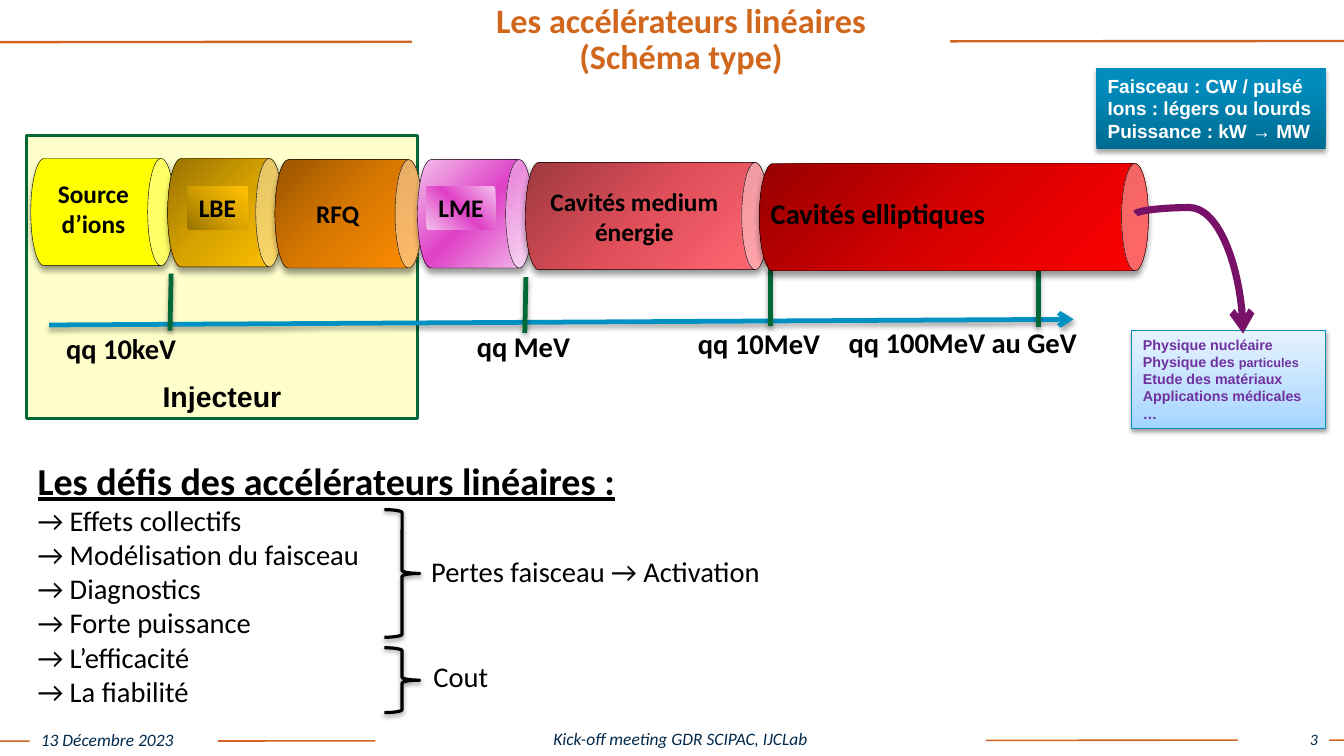
from dataclasses import dataclass, field
from typing import Any, Optional, Union

from lxml.etree import SubElement
from pptx import Presentation
from pptx.dml.color import RGBColor
from pptx.enum.shapes import MSO_CONNECTOR as Link, MSO_SHAPE as Shape
from pptx.enum.text import MSO_ANCHOR as Anchor, MSO_AUTO_SIZE as AutoSize, PP_ALIGN as Align
from pptx.oxml.ns import qn
from pptx.util import Pt

COLORS = {
    "white": "FFFFFF", "black": "000000", "navy": "00294B", "rule": "D06423",
    "title": "D0671C", "green": "006937", "cream": "FFFFCC", "yellow": "FFFF00",
    "axis": "0091C3", "purple": "7030A0", "beam": "781168", "border": "008EBF",
}
GRADIENTS = {
    "gold": {0: "977200", 50: "D7A200", 100: "FFC000"},
    "orange": {0: "995400", 50: "DA7800", 100: "FF8E04"},
    "pink": {0: "F4C0EC", 50: "DF41C7", 100: "F4C0EC"},
    "rose": {0: "9E383F", 50: "E04F5A", 100: "FF6974"},
    "red": {0: "970000", 50: "D70000", 100: "FF0000"},
    "sky": {0: "A1D4FF", 35: "BDE0FF", 100: "E6F3FF"},
    "teal": {0: "006C92", 80: "008CBD", 100: "008DBE"},
}


@dataclass
class Shadow:
    alpha: int
    blur: float
    distance: float


CAN_SHADOW = Shadow(40, 4, 3)
LINE_SHADOW = Shadow(35, 3.1, 1.8)
SOFT_SHADOW = Shadow(38, 3.1, 1.6)


@dataclass
class Box:
    left: float
    top: float
    width: float
    height: float


@dataclass
class Span:
    text: str
    style: dict[str, Any] = field(default_factory=dict)


@dataclass
class Section:
    fill: str
    body: Box
    label: list[str]
    label_box: Box
    size: float = 16
    boxed: bool = False


@dataclass
class Energy:
    text: str
    box: Box
    tick: tuple[float, float, float, float]


@dataclass
class Challenge:
    brace: Box
    text: str
    box: Box


SECTIONS = [
    Section("yellow", Box(19.4, 100.1, 90.7, 67.7), ["Source", "d’ions"], Box(28.8, 108.7, 60.5, 46.1)),
    Section("gold", Box(105.8, 100.1, 72.7, 68.4), ["LBE"], Box(118.1, 118.1, 38.2, 26.6), boxed=True),
    Section("orange", Box(173.5, 100.8, 92.9, 68.4), ["RFQ"], Box(192.2, 121.7, 41.8, 26.6)),
    Section("pink", Box(263.5, 100.8, 72.7, 68.4), ["LME"], Box(269.3, 118.1, 43.2, 26.6), boxed=True),
    Section("rose", Box(331.6, 102.6, 153.4, 67.7), ["Cavités medium", "énergie"], Box(337.7, 113.8, 125.3, 46.1)),
    Section("red", Box(479.2, 103.3, 245.5, 67.7), ["Cavités elliptiques"], Box(478.8, 120.2, 150.5, 28.8), 18),
]
ENERGIES = [
    Energy("qq 10keV", Box(34.6, 205.2, 85, 28.8), (108, 172.8, 107.3, 208.8)),
    Energy("qq MeV", Box(293.8, 204.5, 74.2, 28.8), (331.9, 175, 331.2, 210.2)),
    Energy("qq 10MeV", Box(433.4, 202.3, 92.2, 28.8), (486, 169.9, 486, 205.9)),
    Energy("qq 100MeV au GeV", Box(528.5, 201.6, 159.8, 28.8), (655.2, 171.4, 655.2, 206.6)),
]
CHALLENGES = [
    Challenge(Box(242.6, 321.8, 22.3, 80.6), "Pertes faisceau → Activation", Box(265, 346.3, 224.6, 28.8)),
    Challenge(Box(242.6, 409, 22.3, 41), "Cout", Box(266.4, 412.6, 49.7, 28.8)),
]
FOOTERS = [
    ("13 Décembre 2023", Box(18.7, 456.5, 118.8, 20.9), Align.LEFT, 11),
    ("Kick-off meeting GDR SCIPAC, IJCLab", Box(236.9, 456.5, 385.2, 20.2), Align.CENTER, 11),
    ("3", Box(781.2, 456.5, 57.6, 20.9), Align.RIGHT, 10),
]


def rgb(name: str) -> RGBColor:
    """Look a colour up by name."""
    return RGBColor.from_string(COLORS[name])


def write(shape, lines: list[Union[str, list[Span]]], *, size: float = 18, font: str = "Calibri",
          color: str = "black", bold: bool = True, italic: bool = False, underline: bool = False,
          align=Align.LEFT, anchor=Anchor.TOP, wrap: bool = False, fit: bool = True,
          spacing: Optional[float] = None) -> None:
    """Fill a shape with formatted paragraphs."""
    frame = shape.text_frame
    frame.word_wrap, frame.vertical_anchor = wrap, anchor
    frame.auto_size = AutoSize.SHAPE_TO_FIT_TEXT if fit else AutoSize.NONE
    base = dict(size=size, name=font, bold=bold, italic=italic, underline=underline)
    for index, line in enumerate(lines):
        paragraph = frame.add_paragraph() if index else frame.paragraphs[0]
        paragraph.alignment, paragraph.line_spacing = align, spacing
        for span in [Span(line)] if isinstance(line, str) else line:
            for part, text in enumerate(span.text.split("\n")):
                if part:
                    paragraph.add_line_break()
                run = paragraph.add_run()
                run.text = text
                for key, value in (base | span.style).items():
                    setattr(run.font, key, Pt(value) if key == "size" else value)
                run.font.color.rgb = rgb(color)


def cast(shape, shadow: Optional[Shadow]) -> None:
    """Replace the theme shadow by the given one or none."""
    properties = shape.element.spPr
    effects = properties.find(qn("a:effectLst"))
    if effects is None:
        effects = SubElement(properties, qn("a:effectLst"))
    if shadow:
        outer = SubElement(effects, qn("a:outerShdw"), blurRad=str(Pt(shadow.blur)),
                           dist=str(Pt(shadow.distance)), dir="5400000", rotWithShape="0")
        tint = SubElement(outer, qn("a:srgbClr"), val=COLORS["black"])
        SubElement(tint, qn("a:alpha"), val=str(shadow.alpha * 1000))


def paint(shape, fill: Optional[str], angle: float = 45) -> None:
    """Apply a plain, gradient or empty fill."""
    if fill is None:
        shape.fill.background()
    elif fill in COLORS:
        shape.fill.solid()
        shape.fill.fore_color.rgb = rgb(fill)
    else:
        shape.fill.gradient()
        shape.fill.gradient_angle = angle
        stops = shape.element.spPr.find(".//" + qn("a:gsLst"))
        stops[:] = []
        for position, color in GRADIENTS[fill].items():
            stop = SubElement(stops, qn("a:gs"), pos=str(position * 1000))
            SubElement(stop, qn("a:srgbClr"), val=color)


def draw(slide, kind, box: Box, fill: Optional[str] = None, line: Optional[str] = None,
         weight: float = 1, shadow: Optional[Shadow] = None, angle: float = 45):
    """Add a preset shape."""
    shape = slide.shapes.add_shape(kind, Pt(box.left), Pt(box.top), Pt(box.width), Pt(box.height))
    shape.shadow.inherit = False
    paint(shape, fill, angle)
    if line:
        shape.line.color.rgb, shape.line.width = rgb(line), Pt(weight)
    else:
        shape.line.fill.background()
    cast(shape, shadow)
    return shape


def label(slide, box: Box, lines: list, **style: Any) -> None:
    """Add a text box."""
    write(slide.shapes.add_textbox(Pt(box.left), Pt(box.top), Pt(box.width), Pt(box.height)), lines, **style)


def connect(slide, ends: tuple[float, float, float, float], color: str, weight: float,
            shadow: Optional[Shadow] = None, arrow: bool = False, kind=Link.STRAIGHT):
    """Add a line, with an arrowhead if asked."""
    link = slide.shapes.add_connector(kind, *map(Pt, ends))
    link.line.color.rgb, link.line.width = rgb(color), Pt(weight)
    if arrow:
        SubElement(link.line._get_or_add_ln(), qn("a:tailEnd"), type="arrow")
    cast(link, shadow)
    return link


def draw_section(slide, section: Section) -> None:
    """Add one cylinder of the accelerator with its label."""
    body = section.body
    shift = (body.width - body.height) / 2
    upright = Box(body.left + shift, body.top - shift, body.height, body.width)
    draw(slide, Shape.CAN, upright, section.fill, "black", 0.25, CAN_SHADOW).rotation = 90
    style = dict(size=section.size, align=Align.CENTER)
    if section.boxed:
        write(draw(slide, Shape.RECTANGLE, section.label_box, section.fill), section.label, **style)
    else:
        label(slide, section.label_box, section.label, **style)


def draw_beam(slide) -> None:
    """Add the curved arrow from the last cavity to the applications."""
    beam = connect(slide, (712.8, 139, 788.4, 206.7), "beam", 4.5, arrow=True, kind=Link.CURVE)
    frame = beam.element.spPr.find(qn("a:xfrm"))
    frame.set("rot", "16200000")
    frame.set("flipH", "1")
    geometry = beam.element.spPr.find(qn("a:prstGeom"))
    guides = geometry.find(qn("a:avLst"))
    if guides is None:
        guides = SubElement(geometry, qn("a:avLst"))
    SubElement(guides, qn("a:gd"), name="adj1", fmla="val -5300")


def main() -> None:
    """Build the slide and save it."""
    deck = Presentation()
    deck.slide_width, deck.slide_height = Pt(848.16), Pt(477.36)
    slide = deck.slides.add_slide(deck.slide_layouts[5])
    connect(slide, (848.16, 467.3, 0, 468), "rule", 1)
    connect(slide, (848.16, 25.9, 0, 26.6), "rule", 1.5)
    for text, box, align, size in FOOTERS:
        write(draw(slide, Shape.RECTANGLE, box, "white"), [text], size=size, color="navy", bold=False,
              italic=True, align=align, anchor=Anchor.MIDDLE, wrap=True, fit=False)
    title = slide.shapes.title
    title.element.getparent().append(title.element)
    title.left, title.top, title.width, title.height = Pt(259.9), Pt(0), Pt(339.8), Pt(51.1)
    paint(title, "white")
    write(title, ["Les accélérateurs linéaires\n(Schéma type)"], size=21.6, color="title", wrap=True,
          fit=False, align=Align.CENTER, anchor=Anchor.MIDDLE, spacing=0.9)
    injector = draw(slide, Shape.RECTANGLE, Box(16.6, 85.7, 247, 178.6), "cream", "green", 2)
    write(injector, ["Injecteur"], font="Arial", align=Align.CENTER, anchor=Anchor.BOTTOM, wrap=True, fit=False)
    connect(slide, (31, 205.2, 677.5, 201.6), "axis", 3, LINE_SHADOW, arrow=True)
    for energy in ENERGIES:
        label(slide, energy.box, [energy.text])
        connect(slide, energy.tick, "green", 3, LINE_SHADOW)
    for section in SECTIONS:
        draw_section(slide, section)
    heading = Span("Les défis des accélérateurs linéaires :", {"size": 24, "bold": True, "underline": True})
    topics = ["Effets collectifs", "Modélisation du faisceau", "Diagnostics", "Forte puissance",
              "L’efficacité", "La fiabilité"]
    label(slide, Box(16.6, 285.1, 493.9, 189.4), [[heading], *(f"→ {topic}" for topic in topics)],
          bold=False, wrap=True)
    for challenge in CHALLENGES:
        draw(slide, Shape.RIGHT_BRACE, challenge.brace, None, "black", 2, SOFT_SHADOW)
        label(slide, challenge.box, [challenge.text], bold=False)
    uses = draw(slide, Shape.RECTANGLE, Box(714.2, 208.8, 122.4, 61.9), "sky", "border", 0.75, SOFT_SHADOW, 90)
    write(uses, ["Physique nucléaire", [Span("Physique des "), Span("particules", {"size": 8})],
                 "Etude des matériaux", "Applications médicales", "…"],
          size=9, font="Arial", color="purple", wrap=True)
    beam_facts = draw(slide, Shape.RECTANGLE, Box(691.9, 43.2, 144.7, 51.1), "teal", shadow=LINE_SHADOW, angle=90)
    write(beam_facts, ["Faisceau : CW / pulsé", "Ions : légers ou lourds", "Puissance : kW → MW"],
          size=12, font="Arial", color="white")
    draw_beam(slide)
    deck.save("out.pptx")


if __name__ == "__main__":
    main()
